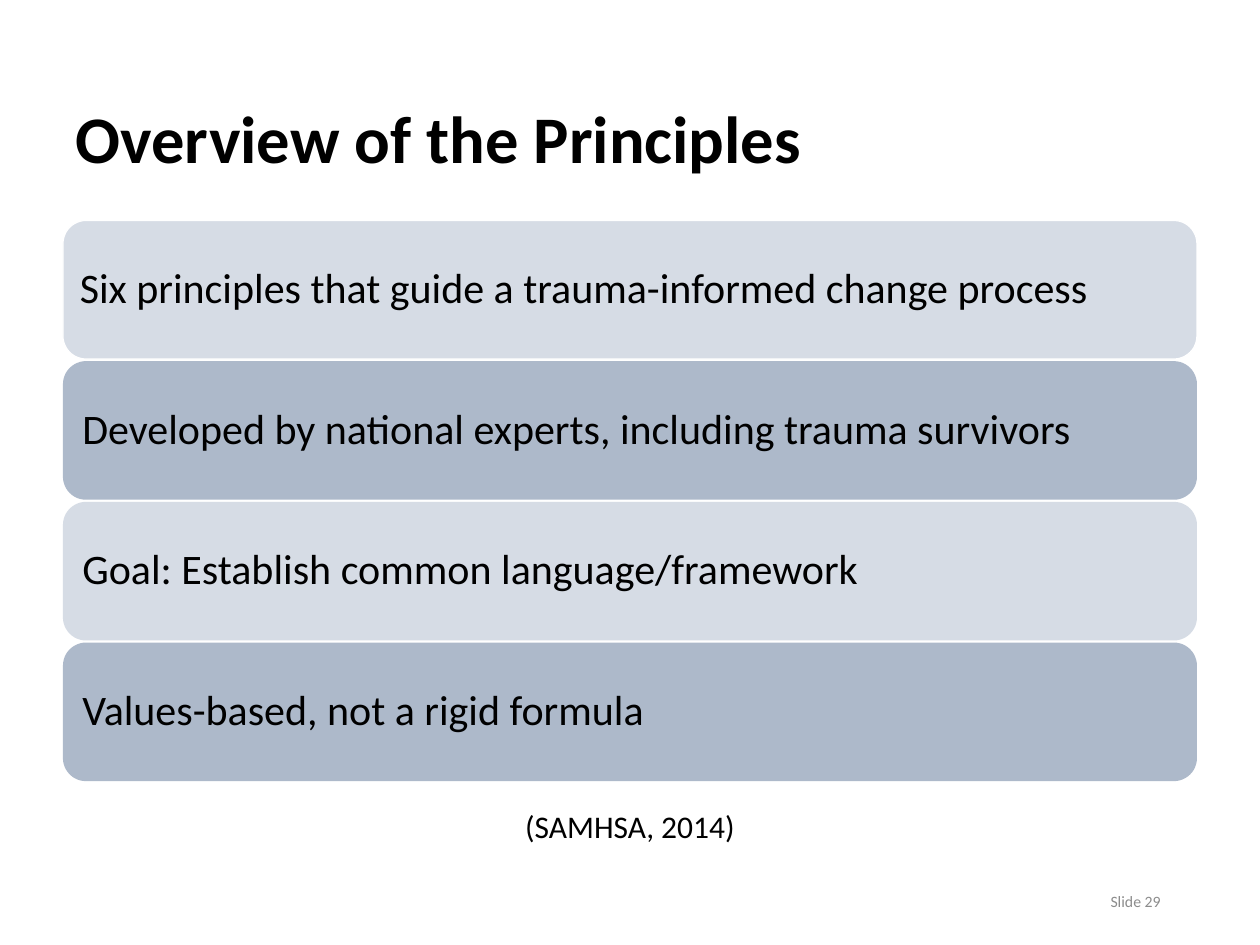
from dataclasses import dataclass

from pptx import Presentation
from pptx.dml.color import RGBColor as RGB
from pptx.enum.shapes import MSO_SHAPE as Shape
from pptx.enum.text import MSO_ANCHOR as Anchor, MSO_AUTO_SIZE as Fit, PP_ALIGN as Align
from pptx.slide import Slide
from pptx.text.text import TextFrame
from pptx.util import Inches, Pt


@dataclass(frozen=True)
class Theme:
    font: str = "Calibri"
    ink: str = "000000"
    muted: str = "8C8C8C"
    light: str = "D6DCE5"
    dark: str = "ADB9CA"
    white: str = "FFFFFF"
    title: int = 38
    body: int = 24
    cite: int = 18
    foot: int = 9


@dataclass(frozen=True)
class Box:
    left: float
    top: float
    width: float
    height: float

    def emu(self) -> tuple:
        return tuple(map(Inches, (self.left, self.top, self.width, self.height)))


@dataclass(frozen=True)
class Band:
    text: str
    fill: str
    edge: str | None = None
    inset: float = 0.15


THEME = Theme()
TITLE = Box(0.5, 0.4, 9.5, 1.45)
CITE = Box(0.56, 6.36, 8.88, 0.4)
FOOT = Box(7.06, 6.95, 2.25, 0.4)
FIRST = Box(0.5, 1.75, 9, 1.1)
LAST_TOP = 5.1
BANDS = [
    Band("Six principles that guide a trauma-informed change process",
         THEME.light, THEME.white, 0.13),
    Band("Developed by national experts, including trauma survivors", THEME.dark),
    Band("Goal: Establish common language/framework", THEME.light),
    Band("Values-based, not a rigid formula", THEME.dark),
]


def write(frame: TextFrame, text: str, *, size: int, color: str = THEME.ink,
          bold: bool = False, align: Align = Align.LEFT,
          anchor: Anchor = Anchor.MIDDLE, space: float = 1.0,
          inset: float = 0.1) -> None:
    frame.word_wrap = True
    frame.auto_size = Fit.NONE
    frame.vertical_anchor = anchor
    frame.margin_left = frame.margin_right = Inches(inset)
    frame.margin_top = frame.margin_bottom = Inches(0.05)
    para = frame.paragraphs[0]
    para.alignment = align
    para.line_spacing = space
    run = para.add_run()
    run.text = text
    font = run.font
    font.name = THEME.font
    font.size = Pt(size)
    font.bold = bold
    font.color.rgb = RGB.from_string(color)


def draw_band(slide: Slide, band: Band, box: Box) -> None:
    shape = slide.shapes.add_shape(Shape.ROUNDED_RECTANGLE, *box.emu())
    shape.shadow.inherit = False
    shape.fill.solid()
    shape.fill.fore_color.rgb = RGB.from_string(band.fill)
    if band.edge:
        shape.line.color.rgb = RGB.from_string(band.edge)
        shape.line.width = Pt(0.75)
    else:
        shape.line.fill.background()
    write(shape.text_frame, band.text, size=THEME.body, space=0.9,
          inset=band.inset - 0.05)


def main() -> None:
    deck = Presentation()
    deck.slide_width, deck.slide_height = Inches(10), Inches(7.5)
    slide = deck.slides.add_slide(deck.slide_layouts[5])

    title = slide.shapes.title
    title.left, title.top, title.width, title.height = TITLE.emu()
    write(title.text_frame, "Overview of the Principles", size=THEME.title,
          bold=True, space=0.9)

    pitch = (LAST_TOP - FIRST.top) / (len(BANDS) - 1)
    for row, band in enumerate(BANDS):
        draw_band(slide, band, Box(FIRST.left, FIRST.top + row * pitch,
                                   FIRST.width, FIRST.height))

    cite = slide.shapes.add_textbox(*CITE.emu())
    write(cite.text_frame, "(SAMHSA, 2014)", size=THEME.cite,
          align=Align.CENTER, anchor=Anchor.TOP)
    foot = slide.shapes.add_textbox(*FOOT.emu())
    write(foot.text_frame, "Slide 29", size=THEME.foot, color=THEME.muted,
          align=Align.RIGHT)

    deck.save("out.pptx")


if __name__ == "__main__":
    main()
